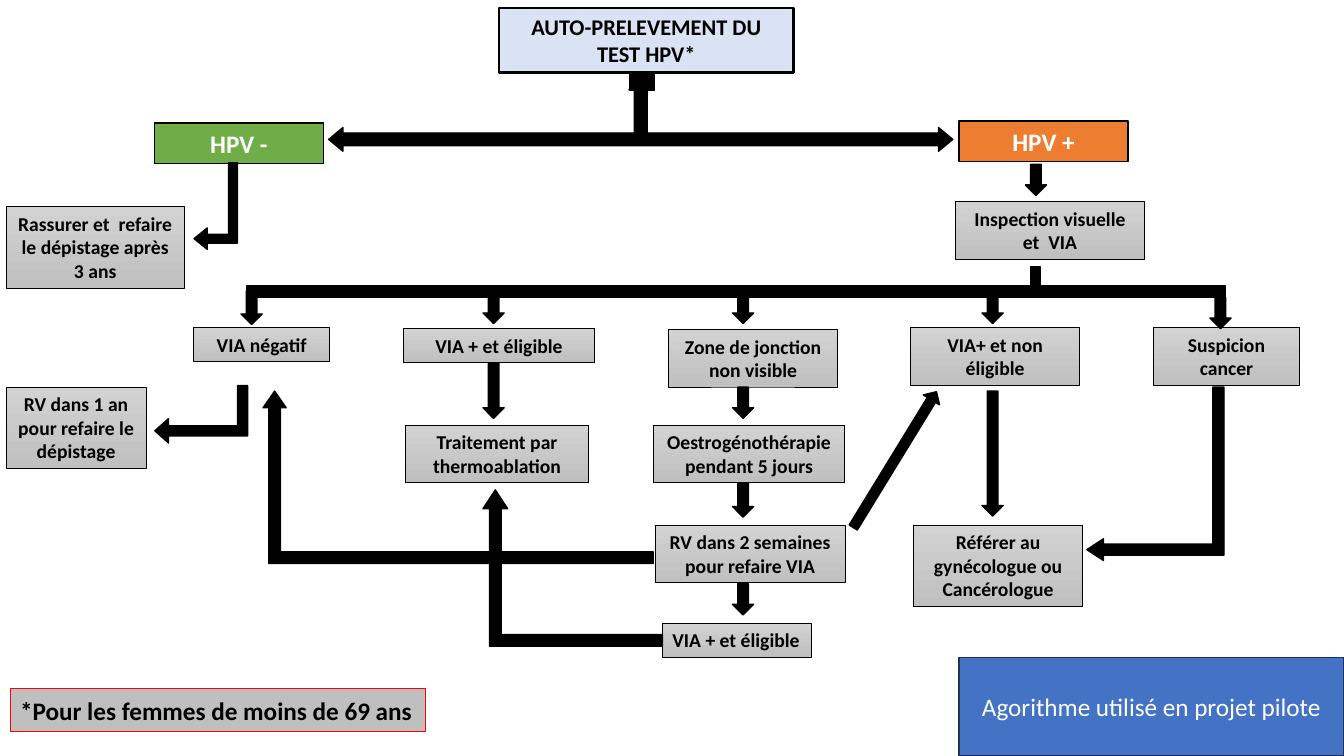
"""Build the HPV self-sampling decision flowchart slide."""
from dataclasses import dataclass
from typing import Optional

from pptx import Presentation
from pptx import util as u
from pptx.dml.color import RGBColor
from pptx.enum import shapes, text

BLACK = RGBColor(0x00, 0x00, 0x00)
WHITE = RGBColor(0xFF, 0xFF, 0xFF)
PALE_BLUE = RGBColor(0xDA, 0xE3, 0xF3)
GREEN = RGBColor(0x70, 0xAD, 0x47)
ORANGE = RGBColor(0xED, 0x7D, 0x31)
BLUE = RGBColor(0x44, 0x72, 0xC4)
NAVY = RGBColor(0x1E, 0x32, 0x56)
RED = RGBColor(0xFF, 0x00, 0x00)
GREY = RGBColor(0xBF, 0xBF, 0xBF)
STEP_TOP = RGBColor(0xD2, 0xD2, 0xD2)
STEP_BOTTOM = RGBColor(0xC0, 0xC0, 0xC0)

KIND = shapes.MSO_SHAPE
ONE_LINE, TWO_LINES, THREE_LINES = 0.34, 0.57, 0.81
ARROW_WIDTH = 0.21
ELIGIBLE_X, JUNCTION_X, REFERRAL_X = (4.79 + 2.475 * i for i in range(3))


@dataclass
class Label:
    """A box with text; without a fill it is a grey gradient step."""
    words: str
    left: float
    top: float
    width: float
    height: float
    fill: Optional[RGBColor] = None
    line: RGBColor = BLACK
    line_width: float = 0.5
    size: int = 14
    color: RGBColor = BLACK
    bold: bool = True
    wrap: bool = True
    grow: bool = True
    spacing: Optional[float] = None
    after: Optional[int] = None


@dataclass
class Arrow:
    """A solid black arrow or bar."""
    left: float
    top: float
    width: float
    height: float
    kind: KIND = KIND.DOWN_ARROW
    rotation: float = 0
    adjustments: tuple[float, ...] = ()
    flip: bool = False


def down(left: float, top: float, height: float = 0.31) -> Arrow:
    """Describe a standard downward arrow."""
    return Arrow(left, top, ARROW_WIDTH, height)


def bent(left: float, top: float, width: float, height: float,
         adjustments: tuple[float, ...], rotation: float = 0) -> Arrow:
    """Describe a mirrored elbow arrow."""
    return Arrow(left, top, width, height, KIND.BENT_UP_ARROW, rotation, adjustments, True)


LABELS = [
    Label("AUTO-PRELEVEMENT DU TEST HPV*", 4.95, 0.08, 2.92, 0.64, PALE_BLUE, line_width=1.5, size=16),
    Label("HPV -", 1.53, 1.22, 1.68, 0.4, GREEN, line_width=1, size=18, color=WHITE),
    Label("HPV +", 9.51, 1.2, 1.68, 0.4, ORANGE, line_width=1, size=18, color=WHITE),
    Label("Rassurer et  refaire le dépistage après 3 ans", 0.06, 2.05, 1.77, THREE_LINES),
    Label("Inspection visuelle et  VIA", 9.48, 2, 1.87, TWO_LINES),
    Label("VIA négatif", 1.92, 3.25, 1.35, ONE_LINE),
    Label("VIA + et éligible", 4, 3.26, 1.9, ONE_LINE),
    Label("Zone de jonction non visible", 6.63, 3.27, 1.68, TWO_LINES),
    Label("VIA+ et non éligible", 9.03, 3.25, 1.68, TWO_LINES),
    Label("Suspicion cancer", 11.44, 3.25, 1.45, TWO_LINES),
    Label("RV dans 1 an pour refaire le dépistage", 0.06, 3.84, 1.39, THREE_LINES),
    Label("Traitement par thermoablation", 4.02, 4.22, 1.82, TWO_LINES),
    Label("Oestrogénothérapie pendant 5 jours", 6.48, 4.22, 1.9, TWO_LINES),
    Label("RV dans 2 semaines pour refaire VIA", 6.5, 5.21, 1.88, TWO_LINES),
    Label("Référer au gynécologue ou Cancérologue", 9.06, 5.21, 1.68, THREE_LINES),
    Label("VIA + et éligible", 6.57, 6.18, 1.48, ONE_LINE, wrap=False),
    Label("*Pour les femmes de moins de 69 ans", 0.1, 6.83, 4.12, 0.43, GREY, RED, 0.75, 18,
          wrap=False, spacing=1.07, after=8),
    Label("Agorithme utilisé en projet pilote", 9.51, 6.52, 3.82, 0.98, BLUE, NAVY, 1, 18, WHITE,
          bold=False, grow=False),
]

ARROWS = [
    Arrow(3.26, 0.75, 6.19, 0.75, KIND.LEFT_RIGHT_UP_ARROW, adjustments=(0.169, 0.156, 0.188)),
    Arrow(6.25, 0.72, 0.24, 0.18, KIND.RECTANGLE),
    down(10.17, 1.63),
    Arrow(10.22, 2.65, 0.1, 0.25, KIND.RECTANGLE),
    Arrow(2.45, 2.83, 9.7, 0.12, KIND.RECTANGLE),
    down(2.39, 2.89, 0.33),
    *(down(x, 2.9) for x in (ELIGIBLE_X, JUNCTION_X, REFERRAL_X)),
    down(12, 2.95),
    down(ELIGIBLE_X, 3.6, 0.55),
    down(JUNCTION_X, 3.84),
    down(JUNCTION_X, 4.79, 0.34),
    down(JUNCTION_X, 5.79),
    down(REFERRAL_X, 3.88, 1.24),
    Arrow(8.78, 3.77, 0.19, 1.58, rotation=211.5),
    bent(10.6, 4.02, 1.72, 1.36, (0.082, 0.079, 0.121), 270),
    bent(2.61, 3.88, 3.87, 1.71, (0.067, 0.067, 0.097)),
    bent(1.71, 3.65, 0.57, 0.92, (0.176, 0.212, 0.239), 270),
    bent(1.71, 1.83, 0.86, 0.43, (0.205, 0.248, 0.305), 270),
    bent(4.79, 4.86, 1.78, 1.55, (0.074, 0.079, 0.121)),
]


def apply(target, formats: dict) -> None:
    """Set every attribute named in the format dict."""
    for name, value in formats.items():
        setattr(target, name, value)


def add_box(page, kind: KIND, item: Label | Arrow, fill: Optional[RGBColor],
            line: RGBColor, line_width: float):
    """Add a shape with its fill and outline, and return it."""
    box = page.shapes.add_shape(kind, *map(u.Inches, (item.left, item.top, item.width, item.height)))
    box.shadow.inherit = False
    if fill is None:
        box.fill.gradient()
        box.fill.gradient_angle = 270
        for stop, color in zip(box.fill.gradient_stops, (STEP_TOP, STEP_BOTTOM)):
            stop.color.rgb = color
    else:
        box.fill.solid()
        box.fill.fore_color.rgb = fill
    box.line.color.rgb = line
    box.line.width = u.Pt(line_width)
    return box


def draw_label(page, label: Label) -> None:
    """Draw a box and its text."""
    box = add_box(page, KIND.RECTANGLE, label, label.fill, label.line, label.line_width)
    apply(box.text_frame, {
        "word_wrap": label.wrap,
        "auto_size": text.MSO_AUTO_SIZE.SHAPE_TO_FIT_TEXT if label.grow else text.MSO_AUTO_SIZE.NONE,
        "vertical_anchor": text.MSO_ANCHOR.TOP if label.grow else text.MSO_ANCHOR.MIDDLE,
    })
    para = box.text_frame.paragraphs[0]
    apply(para, {
        "alignment": text.PP_ALIGN.CENTER if label.wrap else text.PP_ALIGN.LEFT,
        "line_spacing": label.spacing,
        "space_after": None if label.after is None else u.Pt(label.after),
    })
    span = para.add_run()
    span.text = label.words
    apply(span.font, {"name": "Calibri", "size": u.Pt(label.size), "bold": label.bold})
    span.font.color.rgb = label.color


def draw_arrow(page, arrow: Arrow) -> None:
    """Draw a black arrow with its turn and proportions."""
    box = add_box(page, arrow.kind, arrow, BLACK, BLACK, 1)
    box.rotation = arrow.rotation
    for index, value in enumerate(arrow.adjustments):
        box.adjustments[index] = value
    if arrow.flip:
        box.element.spPr.xfrm.set("flipH", "1")


def main() -> None:
    """Create the deck and save it."""
    deck = Presentation()
    apply(deck, {"slide_width": u.Inches(13.33), "slide_height": u.Inches(7.5)})
    page = deck.slides.add_slide(deck.slide_layouts[6])
    for label in LABELS:
        draw_label(page, label)
    for arrow in ARROWS:
        draw_arrow(page, arrow)
    deck.save("out.pptx")


if __name__ == "__main__":
    main()
